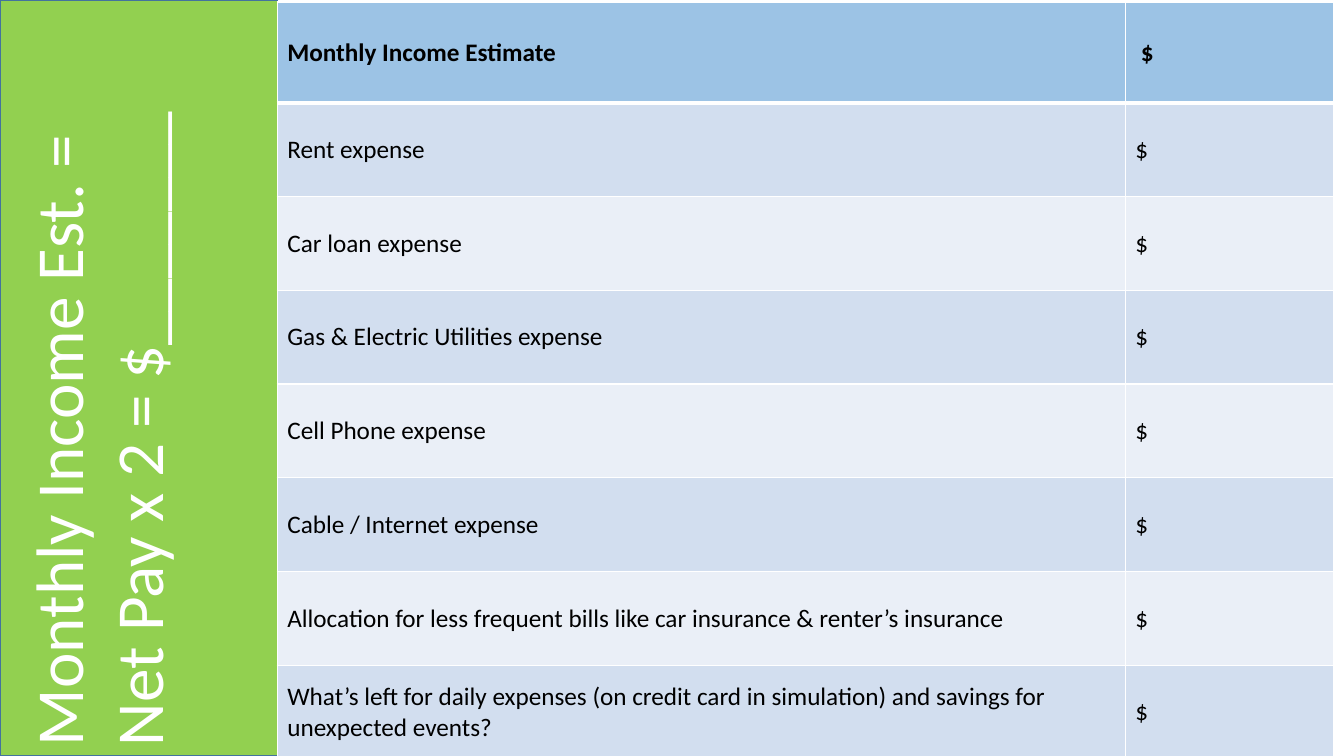
from lxml.etree import SubElement
from pptx import Presentation
from pptx.dml.color import RGBColor
from pptx.enum.shapes import MSO_SHAPE
from pptx.enum.text import MSO_ANCHOR, PP_ALIGN
from pptx.oxml.ns import qn
from pptx.util import Inches, Pt


def paint(target, color):
    target.solid()
    target.fore_color.rgb = RGBColor.from_string(color)


def add_border(cell, side, points):
    border = SubElement(cell._tc.get_or_add_tcPr(), qn(f"a:ln{side}"), w=str(Pt(points)))
    fill = SubElement(border, qn("a:solidFill"))
    SubElement(fill, qn("a:srgbClr"), val="FFFFFF")


deck = Presentation()
deck.slide_width, deck.slide_height = Inches(13.33), Inches(7.5)
slide = deck.slides.add_slide(deck.slide_layouts[6])
banner_width = Inches(2.75)

banner = slide.shapes.add_shape(MSO_SHAPE.RECTANGLE, 0, 0, banner_width, deck.slide_height)
banner.shadow.inherit = False
paint(banner.fill, "92D050")
paint(banner.line.fill, "43739E")
banner.line.width = Pt(1)
formula = banner.text_frame
formula.text = "Monthly Income Est. =\nNet Pay x 2 = $_______"
formula.word_wrap = True
formula.vertical_anchor = MSO_ANCHOR.TOP
formula.margin_left = Inches(0.16)
formula._txBody.bodyPr.set("vert", "vert270")
for line in formula.paragraphs:
    line.alignment = PP_ALIGN.LEFT
    line.font.size = Pt(48)
    for run in line.runs:
        run.font.size = Pt(48)
        run.font.name = "Calibri"
        paint(run.font.fill, "FFFFFF")

budget_items = [
    "Monthly Income Estimate",
    "Rent expense",
    "Car loan expense",
    "Gas & Electric Utilities expense",
    "Cell Phone expense",
    "Cable / Internet expense",
    "Allocation for less frequent bills like car insurance & renter’s insurance",
    "What’s left for daily expenses (on credit card in simulation) and savings for unexpected events?",
]
column_widths = [8.41, 2.07]
budget = slide.shapes.add_table(
    len(budget_items), 2, banner_width, Inches(0.02),
    Inches(sum(column_widths)), Inches(7.48),
).table
for column, width in zip(budget.columns, column_widths):
    column.width = Inches(width)

for index, item in enumerate(budget_items):
    is_header = index == 0
    budget.rows[index].height = Inches(1 if is_header else 0.93)
    amount = " $" if is_header else "$"
    for cell, wording in zip(budget.rows[index].cells, [item, amount]):
        cell.text_frame.text = wording
        cell.vertical_anchor = MSO_ANCHOR.MIDDLE
        font = cell.text_frame.paragraphs[0].runs[0].font
        font.size, font.name, font.bold = Pt(18), "Calibri", is_header
        paint(font.fill, "000000")
        for side in "LRTB":
            under_header = (side == "B" and is_header) or (side == "T" and index == 1)
            add_border(cell, side, 3 if under_header else 1)
        if is_header:
            paint(cell.fill, "5B9BD5")
            header_color = cell._tc.tcPr.find(qn("a:solidFill"))[0]
            SubElement(header_color, qn("a:alpha"), val="60000")
        else:
            paint(cell.fill, "D2DEEF" if index % 2 else "EAEFF7")

deck.save("out.pptx")
